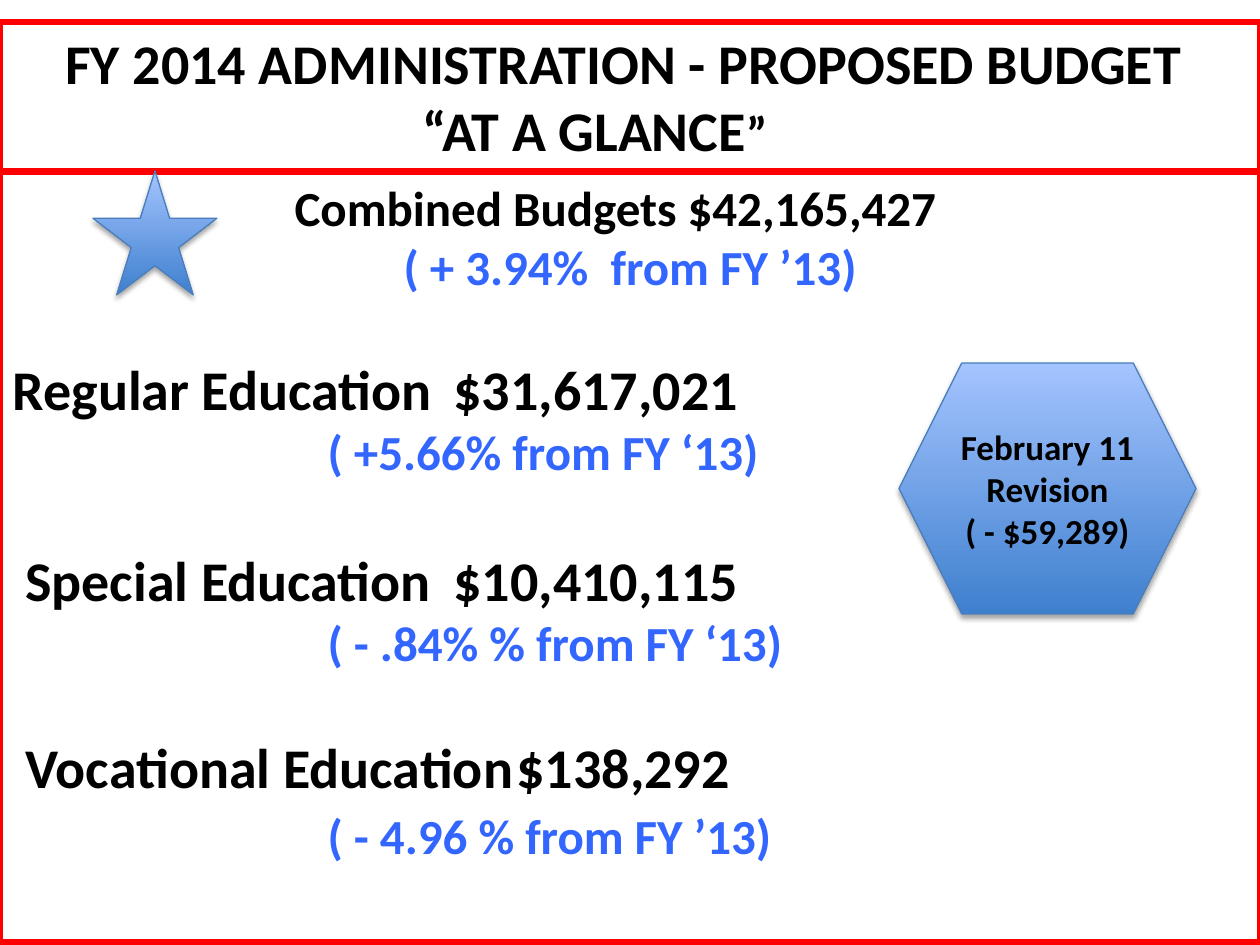
from lxml.etree import SubElement
from pptx import Presentation
from pptx.dml.color import RGBColor
from pptx.enum.shapes import MSO_SHAPE
from pptx.enum.text import MSO_ANCHOR, MSO_AUTO_SIZE, PP_ALIGN
from pptx.oxml.ns import qn
from pptx.util import Emu, Pt

COLORS = {
    "text": "000000",
    "change": "3366FF",
    "frame": "FF0000",
    "paper": "FFFFFF",
    "deep": "3F80CE",
    "pale": "A4C4FF",
    "edge": "4B7EBC",
}
FONT = "Calibri"
LARGE, MEDIUM, SMALL = 32, 28, 20
CHANGE_INDENT = 315


def px(length):
    return Emu(round(length * 914400 / 126))


def rgb(name):
    return RGBColor.from_string(COLORS[name])


class BudgetSlide:
    def __init__(self, deck):
        self.slide = deck.slides.add_slide(deck.slide_layouts[1])
        background = self.slide.background.fill
        background.solid()
        background.fore_color.rgb = rgb("paper")

    def panel(self, index, left, top, width, height):
        holder = self.slide.placeholders[index]
        holder.left, holder.top = px(left), px(top)
        holder.width, holder.height = px(width), px(height)
        holder.line.color.rgb = rgb("frame")
        holder.line.width = Pt(3)
        frame = holder.text_frame
        frame.word_wrap = True
        frame.auto_size = MSO_AUTO_SIZE.NONE
        frame.vertical_anchor = MSO_ANCHOR.TOP
        return frame

    def line(self, frame, runs, centered=True, before=0, after=0,
             spacing=1.0, indent=0, tab=None):
        first = frame.paragraphs[0]
        paragraph = frame.add_paragraph() if first.runs else first
        paragraph.alignment = PP_ALIGN.CENTER if centered else PP_ALIGN.LEFT
        paragraph.space_before, paragraph.space_after = Pt(before), Pt(after)
        paragraph.line_spacing = spacing
        properties = paragraph._p.get_or_add_pPr()
        properties.set("marL", str(px(indent)))
        properties.set("indent", "0")
        SubElement(properties, qn("a:buNone"))
        if tab:
            stops = SubElement(properties, qn("a:tabLst"))
            SubElement(stops, qn("a:tab"), pos=str(px(tab)), algn="l")
        for text, size, color in runs:
            run = paragraph.add_run()
            run.text = text
            run.font.name = FONT
            run.font.size = Pt(size)
            run.font.bold = True
            run.font.color.rgb = rgb(color)

    def badge(self, kind, left, top, width, height):
        badge = self.slide.shapes.add_shape(
            kind, px(left), px(top), px(width), px(height))
        badge.fill.gradient()
        badge.fill.gradient_angle = 90
        for stop, color in zip(badge.fill.gradient_stops, ("deep", "pale")):
            stop.color.rgb = rgb(color)
        badge.line.color.rgb = rgb("edge")
        badge.line.width = Pt(0.75)
        badge.shadow.inherit = False
        effects = badge._element.spPr.find(qn("a:effectLst"))
        shadow = SubElement(
            effects, qn("a:outerShdw"), blurRad=str(Pt(3.1)),
            dist=str(Pt(1.8)), dir="5400000", rotWithShape="0")
        shade = SubElement(shadow, qn("a:srgbClr"), val=COLORS["text"])
        SubElement(shade, qn("a:alpha"), val="35000")
        badge.text_frame.word_wrap = True
        badge.text_frame.vertical_anchor = MSO_ANCHOR.MIDDLE
        return badge.text_frame


def main():
    deck = Presentation()
    deck.slide_width, deck.slide_height = px(1260), px(945)
    page = BudgetSlide(deck)

    title = page.panel(0, 0, 22, 1260, 150)
    page.line(title, [("FY 2014 ADMINISTRATION - PROPOSED BUDGET ", LARGE, "text")])
    page.line(title, [(" “AT A GLANCE", LARGE, "text"), ("”\t\t", MEDIUM, "text")])

    budgets = page.panel(1, 0, 171, 1260, 771)
    page.line(budgets, [(" Combined Budgets $42,165,427\t", MEDIUM, "text")])
    page.line(budgets, [("( + 3.94%  from FY ’13)", MEDIUM, "change")])

    programs = [
        ("Regular Education", "$31,617,021", "( +5.66% from FY ‘13)", 492, 34, 3, 1.0),
        (" Special Education", "$10,410,115", "( - .84% % from FY ‘13)", 504, 34, 0, 1.0),
        (" Vocational Education", "$138,292", "( - 4.96 % from FY ’13)", 517, 31, 0, 1.1),
    ]
    for program, amount, change, tab, before, after, spacing in programs:
        page.line(budgets, [(f"{program}\t{amount}", LARGE, "text")],
                  centered=False, before=before, spacing=spacing, tab=tab)
        page.line(budgets, [(change, MEDIUM, "change")], centered=False,
                  after=after, spacing=spacing, indent=CHANGE_INDENT)

    revision = page.badge(MSO_SHAPE.HEXAGON, 899, 363, 297, 251)
    for text in ("February 11", "Revision", "( - $59,289)"):
        page.line(revision, [(text, SMALL, "text")])
    page.badge(MSO_SHAPE.STAR_5_POINT, 93, 171, 124, 124)

    deck.save("out.pptx")


if __name__ == "__main__":
    main()
